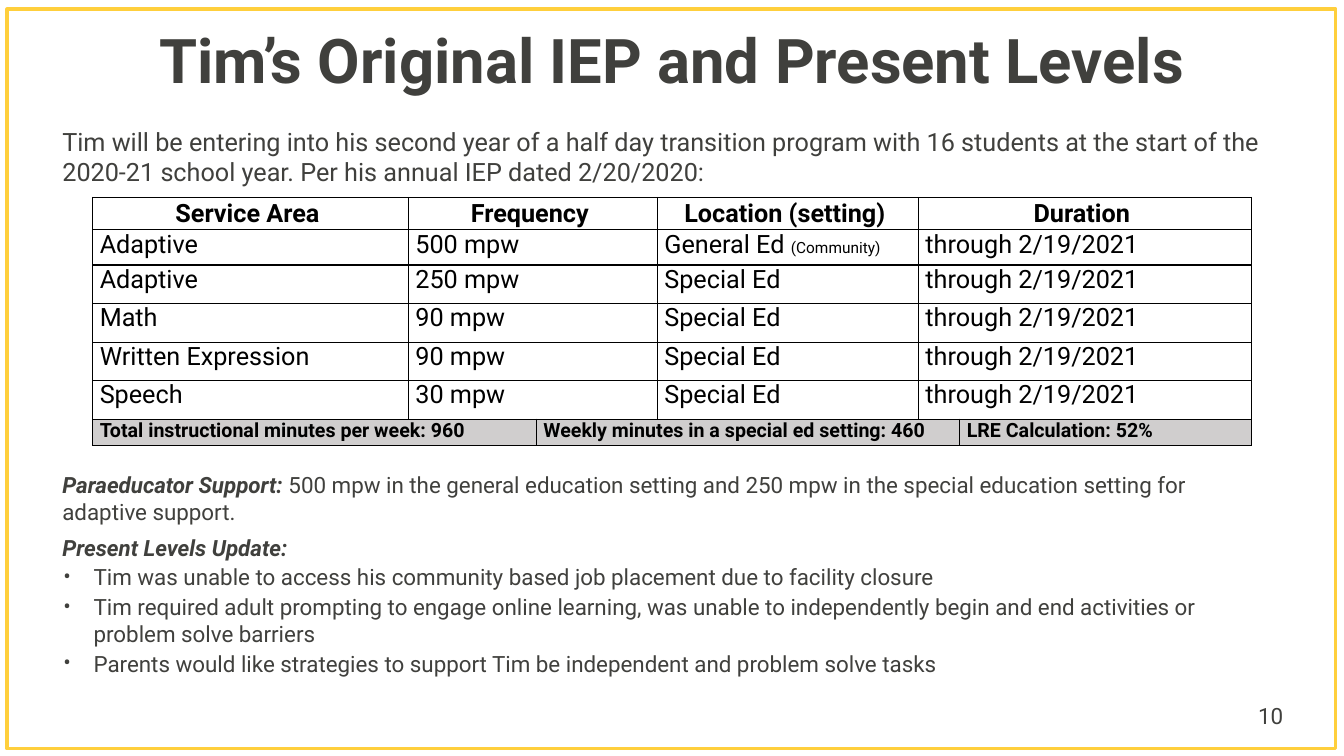
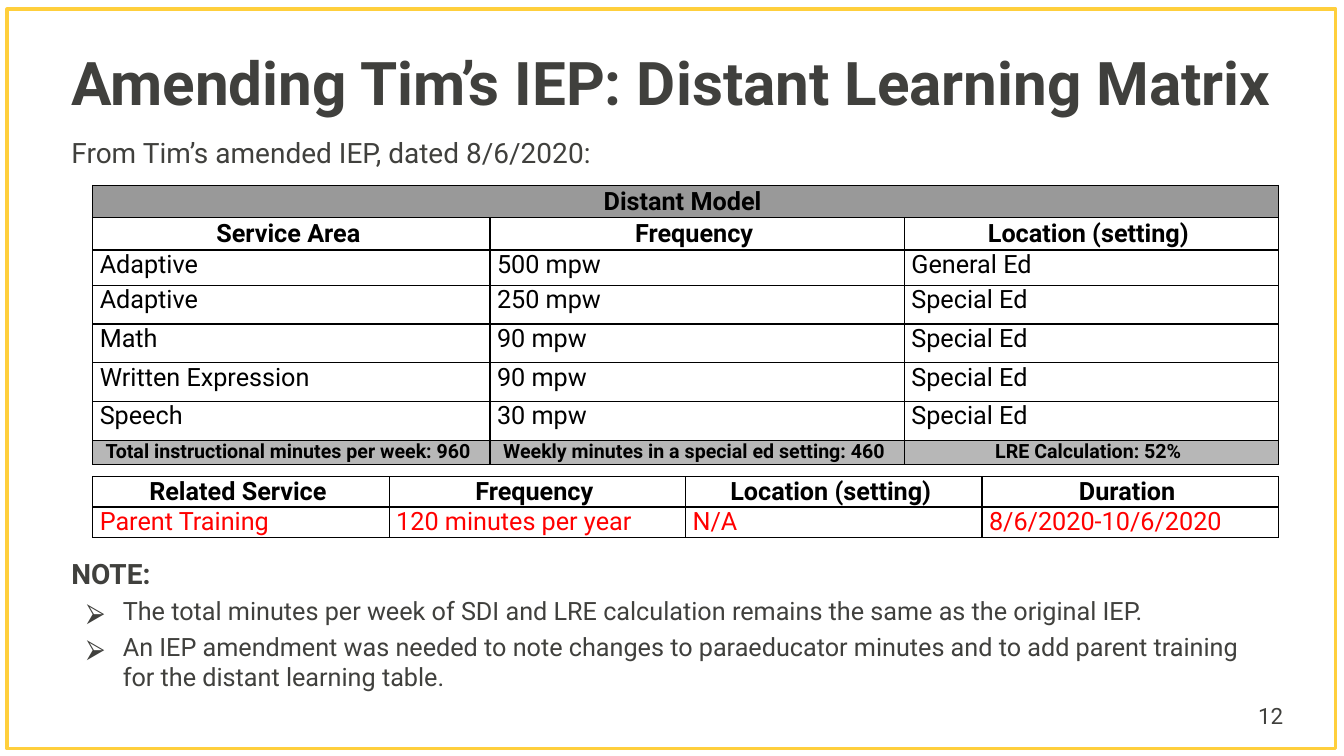
from lxml import etree
from pptx import Presentation
from pptx import util as u
from pptx.dml import color as dml
from pptx.enum import shapes, text
from pptx.oxml import ns

FONT = "Roboto"
SYMBOL_FONT = "Noto Sans Symbols"
INK, BLACK, RED, GOLD = "40403D", "000000", "FF0000", "FFCF3C"
LIGHT_GRAY, MID_GRAY, DARK_GRAY = "D0CECE", "B7B7B7", "999999"
CENTER, LEFT = text.PP_ALIGN.CENTER, text.PP_ALIGN.LEFT
MIDDLE, TOP = text.MSO_ANCHOR.MIDDLE, text.MSO_ANCHOR.TOP
TITLE_ONLY = 5
TABLE_LEFT = 0.92
HEADER = {"bold": True, "align": CENTER, "anchor": MIDDLE}
TOTALS = {"bold": True, "size": 14}
TOTAL_TEXTS = [
    "Total instructional minutes per week: 960",
    "Weekly minutes in a special ed setting: 460",
    "LRE Calculation: 52%",
]
SERVICES = [
    ("Adaptive", "500 mpw", "General Ed"),
    ("Adaptive", "250 mpw", "Special Ed"),
    ("Math", "90 mpw", "Special Ed"),
    ("Written Expression", "90 mpw", "Special Ed"),
    ("Speech", "30 mpw", "Special Ed"),
]


def rgb(value):
    return dml.RGBColor.from_string(value)


def add_text(paragraph, content, size=18, color=INK, bold=False, italic=False):
    run = paragraph.add_run()
    run.text = content
    font = run.font
    font.name, font.size, font.bold, font.italic = FONT, u.Pt(size), bold, italic
    font.color.rgb = rgb(color)


def add_bullet(paragraph, character, typeface, left, hanging):
    properties = paragraph._p.get_or_add_pPr()
    properties.set("marL", str(u.Inches(left)))
    properties.set("indent", str(-u.Inches(hanging)))
    bullet_color = etree.SubElement(properties, ns.qn("a:buClr"))
    etree.SubElement(bullet_color, ns.qn("a:srgbClr"), val=INK)
    etree.SubElement(properties, ns.qn("a:buFont"), typeface=typeface)
    etree.SubElement(properties, ns.qn("a:buChar"), char=character)


def add_box(slide, left, top, width, height, anchor=TOP):
    box = slide.shapes.add_textbox(*map(u.Inches, (left, top, width, height)))
    frame = box.text_frame
    frame.word_wrap = True
    frame.vertical_anchor = anchor
    return frame


def add_paragraph(frame, space_before):
    paragraph = frame.add_paragraph()
    paragraph.space_before = u.Pt(space_before)
    return paragraph


def add_bullets(frame, items, size, space_before, *bullet):
    for item in items:
        paragraph = add_paragraph(frame, space_before)
        add_bullet(paragraph, *bullet)
        add_text(paragraph, item, size=size)


def add_slide(presentation, title, bounds, size, align, number):
    slide = presentation.slides.add_slide(presentation.slide_layouts[TITLE_ONLY])
    frame_box = slide.shapes.add_shape(
        shapes.MSO_SHAPE.RECTANGLE, *map(u.Inches, (0.07, 0.09, 13.18, 7.34))
    )
    frame_box.shadow.inherit = False
    frame_box.fill.background()
    frame_box.line.color.rgb = rgb(GOLD)
    frame_box.line.width = u.Pt(2.25)

    heading = slide.shapes.title
    heading.left, heading.top, heading.width, heading.height = map(u.Inches, bounds)
    frame = heading.text_frame
    frame.word_wrap = True
    frame.auto_size = text.MSO_AUTO_SIZE.NONE
    frame.vertical_anchor = MIDDLE
    paragraph = frame.paragraphs[0]
    paragraph.alignment = align
    paragraph.line_spacing = 0.9
    add_text(paragraph, title, size=size, bold=True)

    page = add_box(slide, 12.38, 6.9, 0.7, 0.4, MIDDLE)
    add_text(page.paragraphs[0], str(number), size=16)
    return slide


def add_borders(cell):
    properties = cell._tc.get_or_add_tcPr()
    for side in ("lnL", "lnR", "lnT", "lnB"):
        line = etree.SubElement(properties, ns.qn("a:" + side), w=str(u.Pt(1)))
        fill = etree.SubElement(line, ns.qn("a:solidFill"))
        etree.SubElement(fill, ns.qn("a:srgbClr"), val=BLACK)


def format_cell(cell, fill, anchor):
    cell.margin_left, cell.margin_right = u.Inches(0.07), u.Inches(0.13)
    cell.margin_top = cell.margin_bottom = 0
    cell.vertical_anchor = anchor
    add_borders(cell)
    if fill:
        cell.fill.solid()
        cell.fill.fore_color.rgb = rgb(fill)
    else:
        cell.fill.background()


def fill_row(table, index, values, fill=None, align=LEFT, anchor=TOP, size=18,
             color=BLACK, bold=False):
    for column, value in enumerate(values):
        cell = table.cell(index, column)
        format_cell(cell, fill, anchor)
        if value is None:
            continue
        end = column
        while end + 1 < len(values) and values[end + 1] is None:
            end += 1
        if end > column:
            cell.merge(table.cell(index, end))
        paragraph = cell.text_frame.paragraphs[0]
        paragraph.alignment = align
        add_text(paragraph, value, size=size, color=color, bold=bold)


def add_table(slide, top, widths, rows):
    heights = [height for height, _, _ in rows]
    bounds = (TABLE_LEFT, top, sum(widths), sum(heights))
    table = slide.shapes.add_table(
        len(rows), len(widths), *map(u.Inches, bounds)
    ).table
    table.first_row = table.horz_banding = False
    for column, width in zip(table.columns, widths):
        column.width = u.Inches(width)
    for index, (height, values, style) in enumerate(rows):
        table.rows[index].height = u.Inches(height)
        fill_row(table, index, values, **style)
    return table


def service_heights(total):
    first = 0.35
    others = len(SERVICES) - 1
    return [first] + [(total - first) / others] * others


def build_original_iep(presentation):
    slide = add_slide(presentation, "Tim’s Original IEP and Present Levels",
                      (0.92, 0.27, 11.5, 0.73), 44, CENTER, 10)
    intro = add_box(slide, 0.52, 1.2, 12.22, 0.7)
    add_text(intro.paragraphs[0],
             "Tim will be entering into his second year of a half day transition "
             "program with 16 students at the start of the 2020-21 school year. "
             "Per his annual IEP dated 2/20/2020:")

    total, weekly, lre = TOTAL_TEXTS
    rows = [(0.32, ["Service Area", "Frequency", None, "Location (setting)",
                    "Duration", None], HEADER)]
    for height, (area, frequency, location) in zip(service_heights(1.88), SERVICES):
        rows.append((height, [area, frequency, None, location,
                              "through 2/19/2021", None], {}))
    rows.append((0.26, [total, None, weekly, None, None, lre],
                 {**TOTALS, "fill": LIGHT_GRAY}))
    table = add_table(slide, 1.96, [3.13, 1.27, 1.2, 2.59, 0.41, 2.89], rows)
    community = table.cell(1, 3).text_frame.paragraphs[0]
    community.runs[0].text = "General Ed "
    add_text(community, "(Community)", size=11, color=BLACK)

    update = add_box(slide, 0.52, 4.63, 12.22, 2.2)
    support = update.paragraphs[0]
    add_text(support, "Paraeducator Support:", size=16, bold=True, italic=True)
    add_text(support, " 500 mpw in the general education setting and 250 mpw in "
             "the special education setting for adaptive support.", size=16)
    add_text(add_paragraph(update, 6), "Present Levels Update:", size=16,
             bold=True, italic=True)
    add_bullets(update, [
        "Tim was unable to access his community based job placement due to "
        "facility closure",
        "Tim required adult prompting to engage online learning, was unable to "
        "independently begin and end activities or problem solve barriers",
        "Parents would like strategies to support Tim be independent and problem "
        "solve tasks",
    ], 16, 2, "•", FONT, 0.31, 0.3)


def build_distant_matrix(presentation):
    slide = add_slide(presentation, "Amending Tim’s IEP: Distant Learning Matrix",
                      (0.61, 0.36, 12.48, 0.99), 43, LEFT, 12)
    intro = add_box(slide, 0.61, 1.29, 10.83, 0.44, MIDDLE)
    add_text(intro.paragraphs[0], "From Tim’s amended IEP, dated 8/6/2020:", size=20)

    total, weekly, lre = TOTAL_TEXTS
    rows = [
        (0.32, ["Distant Model", None, None, None], {**HEADER, "fill": DARK_GRAY}),
        (0.32, ["Service Area", "Frequency", None, "Location (setting)"], HEADER),
    ]
    for height, (area, frequency, location) in zip(service_heights(1.89), SERVICES):
        rows.append((height, [area, frequency, None, location], {}))
    rows.append((0.24, [total, weekly, None, lre],
                 {**TOTALS, "fill": MID_GRAY, "align": CENTER}))
    add_table(slide, 1.84, [3.94, 0.98, 3.13, 3.71], rows)

    add_table(slide, 4.73, [2.94] * 4, [
        (0.3, ["Related Service", "Frequency", "Location (setting)", "Duration"],
         HEADER),
        (0.29, ["Parent Training", "120 minutes per year", "N/A",
                "8/6/2020-10/6/2020"], {"color": RED}),
    ])

    note = add_box(slide, 0.61, 5.45, 12.08, 1.48, MIDDLE)
    add_text(note.paragraphs[0], "NOTE:", size=20, bold=True)
    add_bullets(note, [
        "The total minutes per week of SDI and LRE calculation remains the same "
        "as the original IEP.",
        "An IEP amendment was needed to note changes to paraeducator minutes and "
        "to add parent training for the distant learning table.",
    ], 18, 4, "⮚", SYMBOL_FONT, 0.51, 0.36)


def main():
    presentation = Presentation()
    presentation.slide_width = u.Inches(13.33)
    presentation.slide_height = u.Inches(7.5)
    build_original_iep(presentation)
    build_distant_matrix(presentation)
    presentation.save("out.pptx")


if __name__ == "__main__":
    main()
